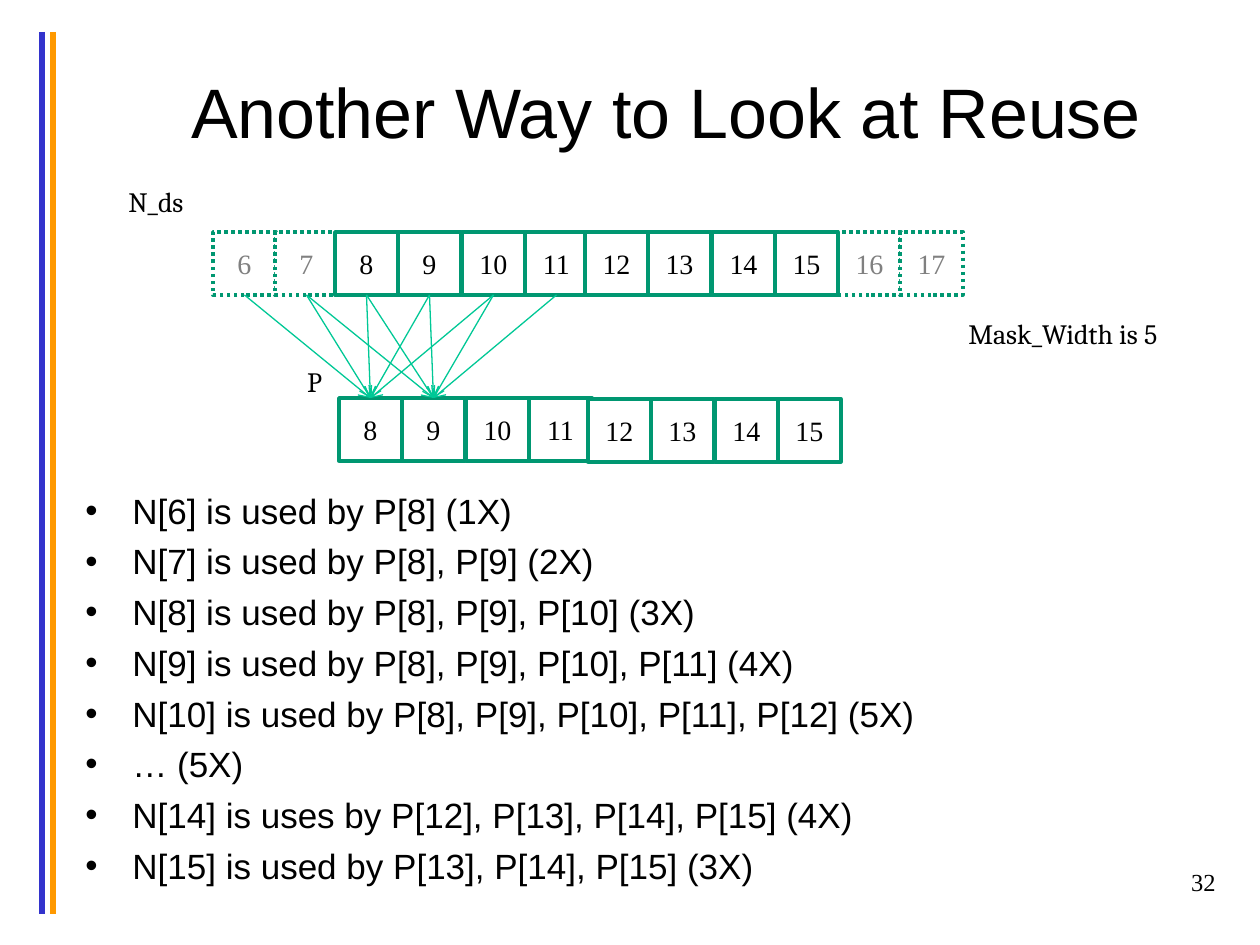
from lxml import etree
from pptx import Presentation
from pptx import util as u
from pptx.dml.color import RGBColor
from pptx.enum import dml, shapes, text
from pptx.oxml.ns import qn

COLORS = {
    "blue": "3333CC", "orange": "FF9900", "green": "009771", "mint": "00C896",
    "white": "FFFFFF", "black": "000000", "gray": "808080",
}
SANS, SERIF, LABEL = "Arial", "Times New Roman", "Cambria"
CELL = 63
MASK_WIDTH = 5

USES = [
    "N[6] is used by P[8] (1X)",
    "N[7] is used by P[8], P[9] (2X)",
    "N[8] is used by P[8], P[9], P[10] (3X)",
    "N[9] is used by P[8], P[9], P[10], P[11] (4X)",
    "N[10] is used by P[8], P[9], P[10], P[11], P[12] (5X)",
    "… (5X)",
    "N[14] is uses by P[12], P[13], P[14], P[15] (4X)",
    "N[15] is used by P[13], P[14], P[15] (3X)",
]


def px(n):
    return u.Inches(n / 126)


def rgb(name):
    return RGBColor.from_string(COLORS[name])


class Slide:
    def __init__(self, deck):
        self.page = deck.slides.add_slide(deck.slide_layouts[6])

    def span(self, para, words, size, font, color="black"):
        span = para.add_run()
        span.text = words
        span.font.size = u.Pt(size)
        span.font.name = font
        span.font.color.rgb = rgb(color)

    def text(self, x, y, w, h, lines, size, font, align="LEFT", anchor="TOP",
             wrap=True, inset=None, bullets=False):
        box = self.page.shapes.add_textbox(px(x), px(y), px(w), px(h))
        frame = box.text_frame
        frame.word_wrap = wrap
        frame.vertical_anchor = text.MSO_ANCHOR[anchor]
        if inset is not None:
            frame.margin_left = frame.margin_right = px(inset)
        for i, line in enumerate(lines):
            para = frame.add_paragraph() if i else frame.paragraphs[0]
            para.alignment = text.PP_ALIGN[align]
            self.span(para, line, size, font)
            if bullets:
                self.bullet(para)

    def bullet(self, para):
        para.space_before = u.Pt(5)
        props = para._p.get_or_add_pPr()
        props.set("marL", str(px(47)))
        props.set("indent", str(-px(47)))
        etree.SubElement(props, qn("a:buFont")).set("typeface", SANS)
        etree.SubElement(props, qn("a:buChar")).set("char", "•")

    def cell(self, x, y, label, ghost=False, filled=True):
        """Draw one array element; a ghost is a dotted halo element."""
        box = self.page.shapes.add_shape(
            shapes.MSO_SHAPE.RECTANGLE, px(x), px(y), px(CELL), px(CELL))
        box.shadow.inherit = False
        if filled:
            box.fill.solid()
            box.fill.fore_color.rgb = rgb("white")
        else:
            box.fill.background()
        box.line.color.rgb = rgb("green")
        box.line.width = u.Pt(2)
        if ghost:
            box.line.dash_style = dml.MSO_LINE.ROUND_DOT
        box.text_frame.vertical_anchor = text.MSO_ANCHOR.MIDDLE
        para = box.text_frame.paragraphs[0]
        para.alignment = text.PP_ALIGN.CENTER
        self.span(para, label, 16, SERIF, "gray" if ghost else "black")
        return box

    def tile(self, x, y, first):
        """Draw four solid cells and return them by index."""
        return {first + i: self.cell(x + round(i * 190 / 3), y, str(first + i), filled=i < 3)
                for i in range(4)}

    def halo(self, x, y, first):
        """Draw two dotted cells and return them by index."""
        return {first + i: self.cell(x + i * 62, y, str(first + i), ghost=True)
                for i in range(2)}

    def line(self, x1, y1, x2, y2, color, width):
        link = self.page.shapes.add_connector(
            shapes.MSO_CONNECTOR.STRAIGHT, px(x1), px(y1), px(x2), px(y2))
        link.line.color.rgb = rgb(color)
        link.line.width = u.Pt(width)
        etree.SubElement(link._element.spPr, qn("a:effectLst"))
        return link

    def arrow(self, source, target):
        """Join the bottom of one cell to the top of another."""
        link = self.line(0, 0, 0, 0, "mint", 0.75)
        link.begin_connect(source, 2)
        link.end_connect(target, 0)
        stroke = link._element.spPr.find(qn("a:ln"))
        etree.SubElement(stroke, qn("a:tailEnd")).set("type", "arrow")


def main():
    deck = Presentation()
    deck.slide_width, deck.slide_height = u.Inches(10), u.Inches(7.5)
    slide = Slide(deck)

    slide.line(42, 32, 42, 914, "blue", 3)
    slide.line(53, 32, 53, 914, "orange", 3)
    slide.text(94, 32, 1144, 157, ["Another Way to Look at Reuse"], 40, SANS,
               align="CENTER", anchor="MIDDLE")
    slide.text(966, 861, 262, 63, ["32"], 14, SERIF, align="RIGHT")

    inputs = {**slide.halo(213, 232, 6), **slide.halo(838, 232, 16),
              **slide.tile(335, 232, 8), **slide.tile(585, 232, 12)}
    outputs = {**slide.tile(339, 398, 8), **slide.tile(588, 399, 12)}
    for target in (8, 9):
        for offset in range(MASK_WIDTH):
            source = target - MASK_WIDTH // 2 + offset
            slide.arrow(inputs[source], outputs[target])

    slide.text(116, 178, 86, 47, ["N_ds"], 16, LABEL, wrap=False)
    slide.text(956, 310, 227, 47, ["Mask_Width is 5"], 16, LABEL, wrap=False)
    slide.text(307, 358, 16, 47, ["P"], 16, LABEL, wrap=False, inset=0)
    slide.text(73, 483, 1174, 357, USES, 20, SANS, bullets=True)

    deck.save("out.pptx")


if __name__ == "__main__":
    main()
